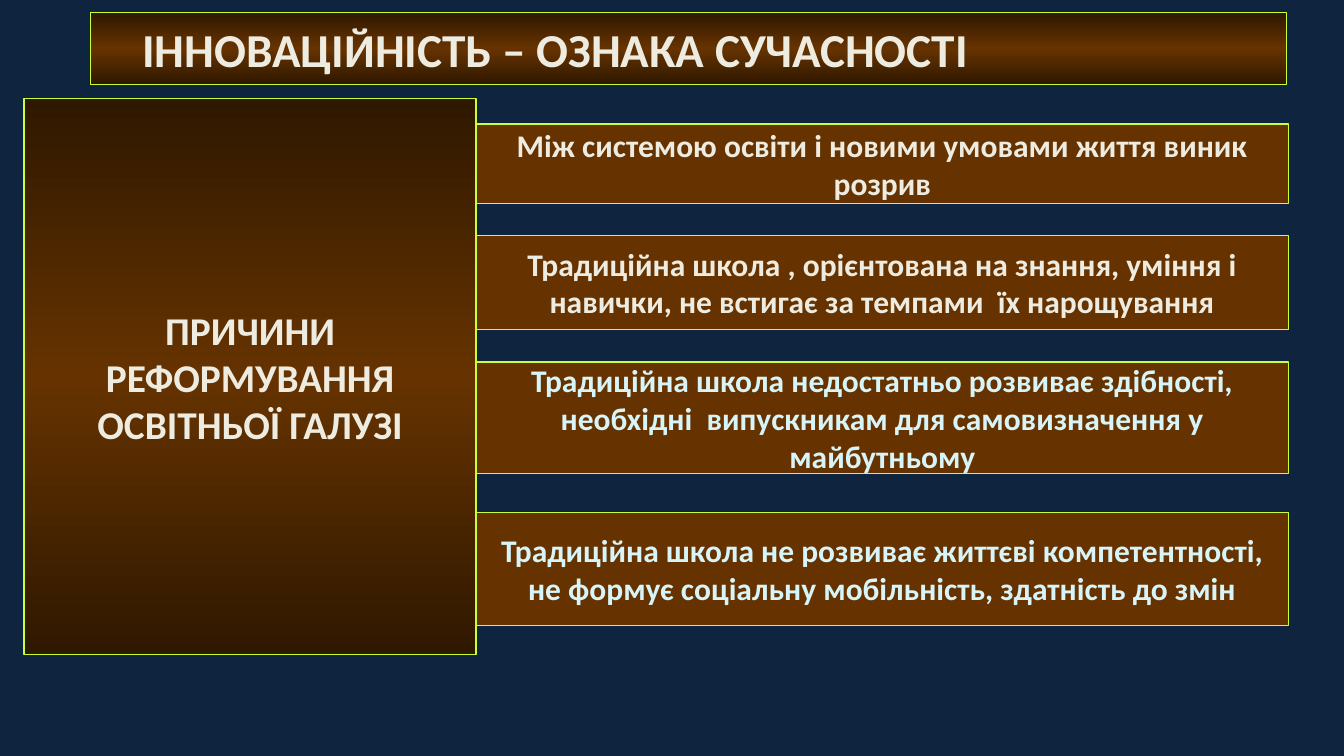
"""Build the slide on the reasons for reforming education."""
from copy import deepcopy

from pptx import Presentation
from pptx.dml.color import RGBColor
from pptx.enum.shapes import MSO_SHAPE
from pptx.enum.text import MSO_ANCHOR, MSO_AUTO_SIZE, PP_ALIGN
from pptx.oxml.ns import qn
from pptx.util import Inches, Pt

DARK, BROWN, LIME = "2F1800", "663300", "CCFF33"
CREAM, ICE = "EEECE1", "D7F5F9"


def paint(color, code):
    color.rgb = RGBColor.from_string(code)


def style(box, text, size, code, width, shade=False):
    if shade:
        box.fill.gradient()
        box.fill.gradient_angle = 90
        first = box._element.spPr.find(".//" + qn("a:gs"))
        first.addnext(deepcopy(first))
        tones = [(0, DARK), (0.5, BROWN), (1, DARK)]
        for stop, (place, tone) in zip(box.fill.gradient_stops, tones):
            stop.position = place
            paint(stop.color, tone)
    else:
        box.fill.solid()
        paint(box.fill.fore_color, BROWN)
    paint(box.line.color, LIME)
    box.line.width = Pt(width)
    box.shadow.inherit = False
    frame = box.text_frame
    frame.text = text
    frame.word_wrap = True
    frame.auto_size = MSO_AUTO_SIZE.NONE
    frame.vertical_anchor = MSO_ANCHOR.MIDDLE
    frame.margin_left = frame.margin_right = Inches(0.17)
    frame.margin_top = frame.margin_bottom = Inches(0.08)
    line = frame.paragraphs[0]
    line.alignment = PP_ALIGN.CENTER
    line.font.name = "Calibri"
    line.font.size = Pt(size)
    line.font.bold = True
    paint(line.font.color, code)


deck = Presentation()
deck.slide_width, deck.slide_height = Inches(18.97), Inches(10.67)
slide = deck.slides.add_slide(deck.slide_layouts[5])
slide.background.fill.solid()
paint(slide.background.fill.fore_color, "0F243E")

title = slide.shapes.title
title.left, title.top = Inches(1.27), Inches(0.18)
title.width, title.height = Inches(16.88), Inches(1.01)
style(title, "ІННОВАЦІЙНІСТЬ – ОЗНАКА СУЧАСНОСТІ", 48, CREAM, 0.75, True)
title.text_frame.margin_left = Inches(0.74)
title.text_frame.paragraphs[0].alignment = PP_ALIGN.LEFT

cause = slide.shapes.add_shape(
    MSO_SHAPE.RECTANGLE, Inches(0.34), Inches(1.39), Inches(6.38), Inches(7.85))
style(cause, "ПРИЧИНИ РЕФОРМУВАННЯ ОСВІТНЬОЇ ГАЛУЗІ", 40, CREAM, 1.25, True)

reasons = [
    (1.75, 1.12, CREAM, "Між системою освіти і новими умовами життя виник розрив"),
    (3.32, 1.33, CREAM, "Традиційна школа , орієнтована на знання, уміння і "
     "навички, не встигає за темпами  їх нарощування"),
    (5.11, 1.57, ICE, "Традиційна школа недостатньо розвиває здібності, "
     "необхідні  випускникам для самовизначення у майбутньому"),
    (7.23, 1.6, ICE, "Традиційна школа не розвиває життєві компетентності, "
     "не формує соціальну мобільність, здатність до змін"),
]
for top, height, code, text in reasons:
    bar = slide.shapes.add_shape(
        MSO_SHAPE.RECTANGLE, Inches(6.72), Inches(top), Inches(11.47), Inches(height))
    style(bar, text, 32, code, 1.25)

deck.save("out.pptx")
